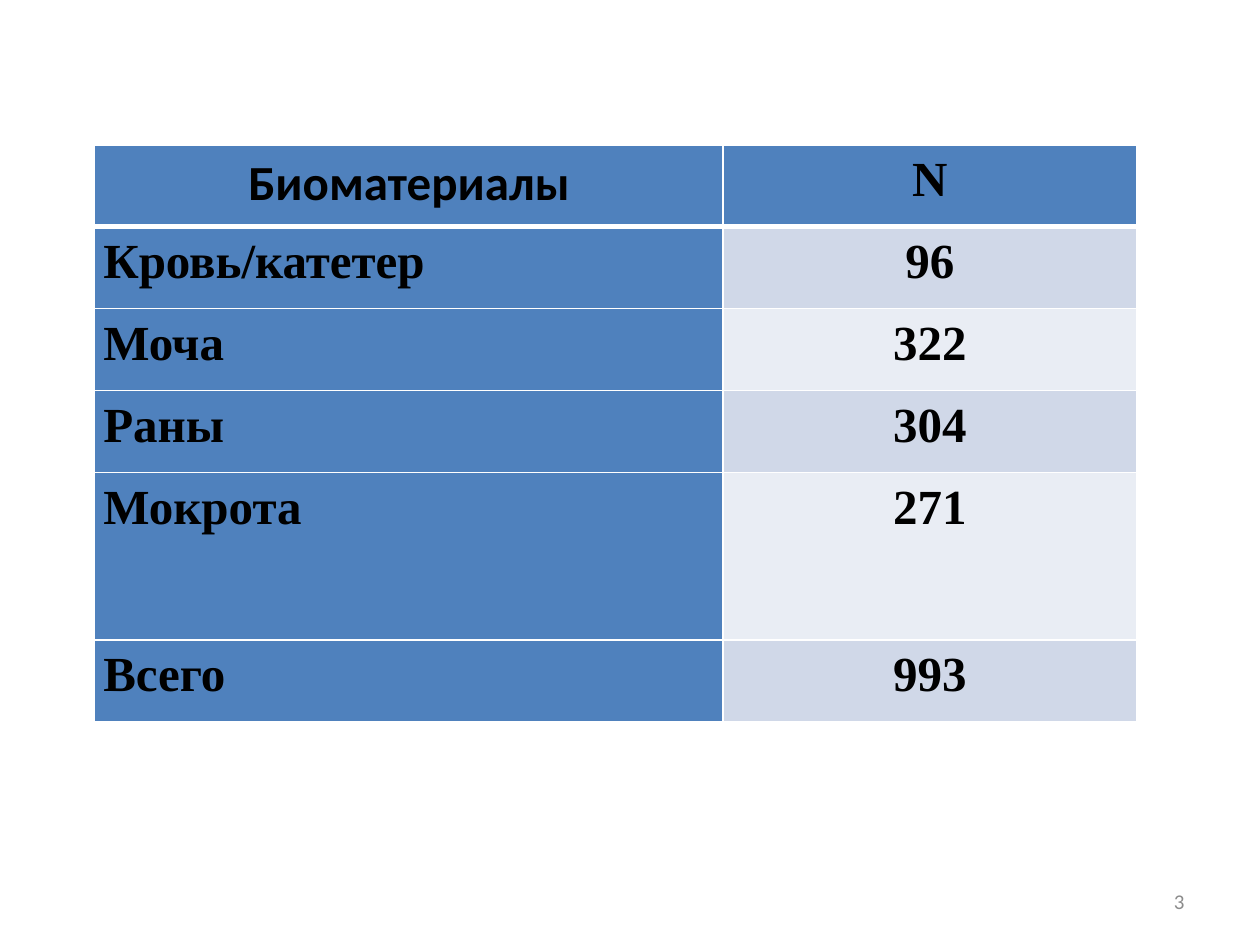
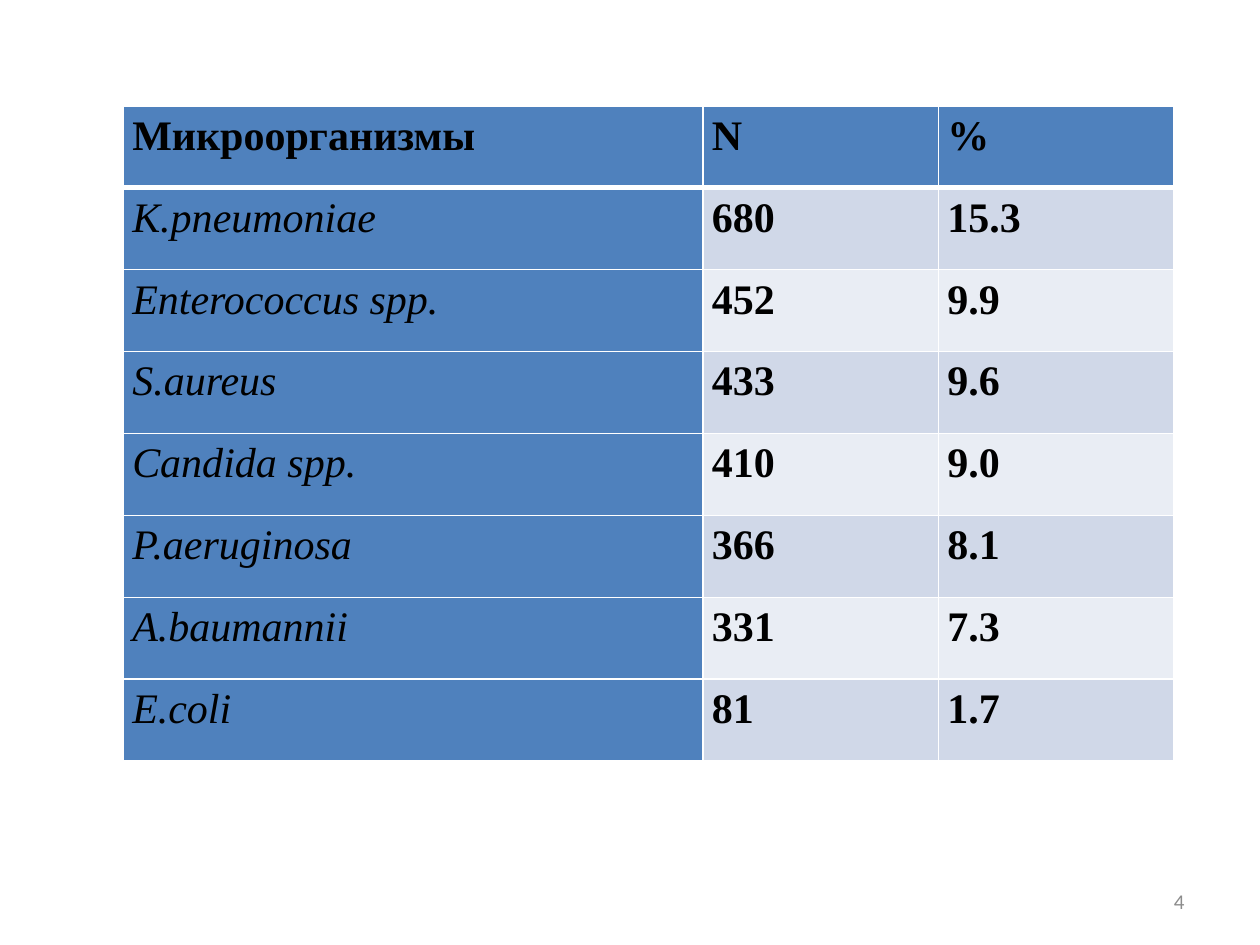
from lxml.etree import SubElement
from pptx import Presentation
from pptx.dml.color import RGBColor
from pptx.enum.text import MSO_ANCHOR, PP_ALIGN
from pptx.oxml import parse_xml
from pptx.oxml.ns import nsdecls
from pptx.util import Inches, Pt

# Shared look
BLACK = RGBColor(0x00, 0x00, 0x00)
WHITE = RGBColor(0xFF, 0xFF, 0xFF)
GRAY = RGBColor(0x8C, 0x8C, 0x8C)
BLUE = RGBColor(0x4F, 0x81, 0xBD)
BANDS = (RGBColor(0xD0, 0xD8, 0xE8), RGBColor(0xE9, 0xED, 0xF4))
SERIF, SANS = "Times New Roman", "Calibri"
ROW_HEIGHT = 0.65

BIOMATERIALS = [
    ("Биоматериалы", "N"),
    ("Кровь/катетер", "96"),
    ("Моча", "322"),
    ("Раны", "304"),
    ("Мокрота", "271"),
    ("Всего", "993"),
]
MICROORGANISMS = [
    ("Микроорганизмы", "N", "%"),
    ("K.pneumoniae", "680", "15.3"),
    ("Enterococcus spp.", "452", "9.9"),
    ("S.aureus", "433", "9.6"),
    ("Candida spp.", "410", "9.0"),
    ("P.aeruginosa", "366", "8.1"),
    ("A.baumannii", "331", "7.3"),
    ("E.coli", "81", "1.7"),
]


def write(frame, text, size=12, font=SERIF, color=BLACK, bold=False,
          italic=False, align=PP_ALIGN.LEFT, spacing=1.0):
    paragraph = frame.paragraphs[0]
    paragraph.alignment = align
    paragraph.line_spacing = spacing
    run = paragraph.add_run()
    run.text = text
    run.font.size = Pt(size)
    run.font.name = font
    run.font.color.rgb = color
    run.font.bold = bold
    run.font.italic = italic


def add_borders(cell, **widths):
    """Draw white cell edges; widths in points, keyed by L, R, T and B."""
    properties = cell._tc.get_or_add_tcPr()
    for position, (side, width) in enumerate(widths.items()):
        edge = parse_xml(
            f'<a:ln{side} {nsdecls("a")} w="{Pt(width)}"><a:solidFill>'
            f'<a:srgbClr val="{WHITE}"/></a:solidFill></a:ln{side}>')
        properties.insert(position, edge)


def style_cell(cell, row, column):
    cell.margin_left = cell.margin_right = Inches(0.07)
    cell.margin_top = cell.margin_bottom = 0
    cell.fill.solid()
    is_label = row == 0 or column == 0
    cell.fill.fore_color.rgb = BLUE if is_label else BANDS[(row - 1) % 2]
    add_borders(cell, L=1, R=1, T=3 if row == 1 else 1, B=3 if row == 0 else 1)


def add_count_table(slide, left, top, column_widths, rows, text_format,
                    tall_rows=None):
    """text_format(row, column) returns the text options of one cell."""
    heights = [ROW_HEIGHT] * len(rows)
    for row, height in (tall_rows or {}).items():
        heights[row] = height
    table = slide.shapes.add_table(
        len(rows), len(column_widths), Inches(left), Inches(top),
        Inches(sum(column_widths)), Inches(sum(heights))).table
    table.first_col = True
    for column, width in zip(table.columns, column_widths):
        column.width = Inches(width)
    for row, values in enumerate(rows):
        table.rows[row].height = Inches(heights[row])
        for column, value in enumerate(values):
            cell = table.cell(row, column)
            style_cell(cell, row, column)
            write(cell.text_frame, value, spacing=1.15,
                  **text_format(row, column))


def add_page_number(slide, number):
    box = slide.shapes.add_textbox(
        Inches(7.17), Inches(6.95), Inches(2.33), Inches(0.4))
    box.text_frame.word_wrap = True
    box.text_frame.vertical_anchor = MSO_ANCHOR.MIDDLE
    write(box.text_frame, str(number), font=SANS, color=GRAY,
          align=PP_ALIGN.RIGHT)


def biomaterial_format(row, column):
    centered = row == 0 or column > 0
    return {
        "size": 28,
        "bold": True,
        "font": SANS if (row, column) == (0, 0) else SERIF,
        "align": PP_ALIGN.CENTER if centered else PP_ALIGN.LEFT,
    }


def microorganism_format(row, column):
    is_species = row > 0 and column == 0
    return {"size": 24, "bold": not is_species, "italic": is_species}


def build_biomaterials(slide):
    add_count_table(slide, 0.75, 1.15, (4.99, 3.28), BIOMATERIALS,
                    biomaterial_format, tall_rows={4: 1.33})


def build_microorganisms(slide):
    add_count_table(slide, 0.98, 0.84, (4.6, 1.87, 1.87), MICROORGANISMS,
                    microorganism_format)


def main():
    presentation = Presentation()
    presentation.slide_width = Inches(10)
    presentation.slide_height = Inches(7.5)
    blank = presentation.slide_layouts[6]
    builders = (build_biomaterials, build_microorganisms)
    for number, build in enumerate(builders, start=3):
        slide = presentation.slides.add_slide(blank)
        build(slide)
        add_page_number(slide, number)
    presentation.save("out.pptx")


if __name__ == "__main__":
    main()
